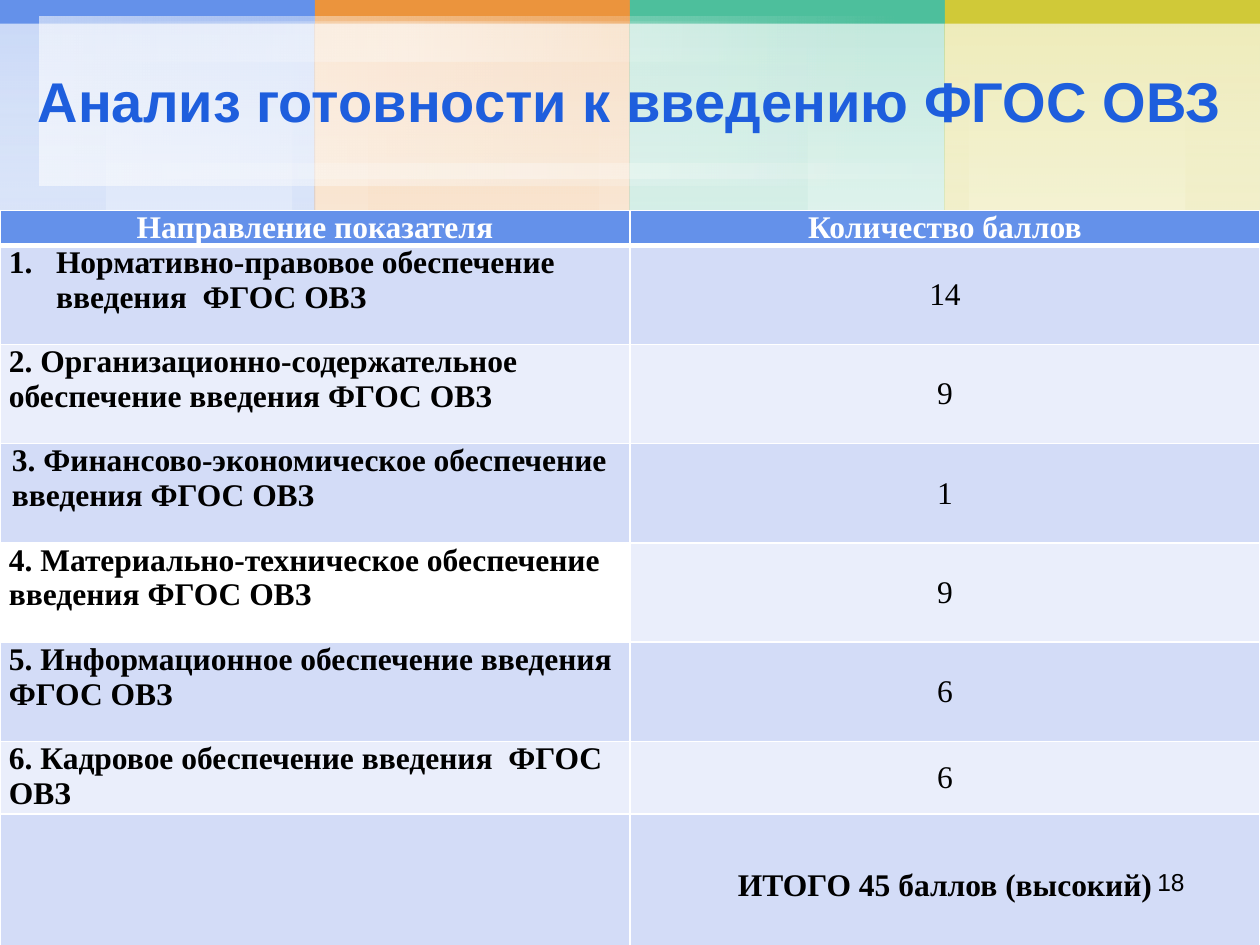
from lxml.etree import SubElement as Sub
from pptx import Presentation
from pptx.dml.color import RGBColor as RGB
from pptx.enum.shapes import MSO_SHAPE as Shape
from pptx.enum.text import MSO_ANCHOR as Anchor, PP_ALIGN as Align
from pptx.oxml.ns import qn
from pptx.util import Cm, Pt

BLUE = RGB(0x64, 0x91, 0xEA)
ORANGE = RGB(0xEB, 0x94, 0x3D)
GREEN = RGB(0x4D, 0xBF, 0x9C)
YELLOW = RGB(0xD0, 0xC9, 0x38)
WHITE = RGB(0xFF, 0xFF, 0xFF)
BLACK = RGB(0, 0, 0)
TITLE = RGB(0x1E, 0x5E, 0xDD)
DARK = RGB(0xD3, 0xDC, 0xF7)
LIGHT = RGB(0xEA, 0xEE, 0xFB)
SERIF = "Times New Roman"

deck = Presentation()
deck.slide_width, deck.slide_height = Cm(25.4), Cm(19.05)
slide = deck.slides.add_slide(deck.slide_layouts[5])
shapes = slide.shapes


def add_box(left, top, width, height, hue, angle=None, stops=()):
    box = shapes.add_shape(Shape.RECTANGLE, Cm(left), Cm(top), Cm(width), Cm(height))
    box.shadow.inherit = False
    box.line.fill.background()
    if angle is None:
        box.fill.solid()
        box.fill.fore_color.rgb = hue
        return
    box.fill.gradient()
    box.fill.gradient_angle = angle
    group = box._element.spPr.find(".//" + qn("a:gsLst"))
    for old in list(group):
        group.remove(old)
    for pos, alpha in stops:
        stop = Sub(group, qn("a:gs"), pos=str(pos * 1000))
        tint = Sub(stop, qn("a:srgbClr"), val=str(hue if alpha else WHITE))
        Sub(tint, qn("a:alpha"), val=str(alpha * 1000))


def style(para, size, font, hue, bold, align):
    para.alignment = align
    for run in para.runs:
        run.font.size, run.font.name = Pt(size), font
        run.font.color.rgb, run.font.bold = hue, bold


FADE = [(0, 20), (100, 0)]
GLOW = [(0, 0), (50, 20), (100, 0)]
SHINE = [(0, 35), (100, 0)]
GLEAM = [(0, 0), (50, 35), (100, 0)]
WIDE = 6.35

bands = [
    (BLUE, 14.28, 14.28, [(5.89, 0.46), (0, 2.13)]),
    (ORANGE, 19.05, 19.05, [(1.07, 4.65)]),
    (GREEN, 14.28, 14.28, [(0, 3.58)]),
    (YELLOW, 18.97, 16.18, [(0, 0.48), (4.85, 1.5)]),
]
for num, (hue, tall, low, glows) in enumerate(bands):
    left = num * WIDE
    add_box(left, 0, WIDE, tall, hue, 270, FADE)
    for shift, width in glows:
        add_box(left + shift, 0, width, low, hue, 270, GLOW)
    add_box(left, 0, WIDE, tall, hue, 270, FADE)
for num, band in enumerate(bands):
    add_box(num * WIDE, 0, WIDE, 0.48, band[0])

for left, top, width, height, stops in [
    (0.8, 3.3, 19.6, 0.3, GLEAM),
    (0.8, 0.34, 17.5, 3.41, SHINE),
    (0.8, 0.44, 14.9, 0.81, GLEAM),
    (0.8, 0.34, 17.5, 3.41, SHINE),
]:
    add_box(left, top, width, height, WHITE, 0, stops)

title = shapes.title
shapes._spTree.append(title._element)
title.left, title.top, title.width, title.height = Cm(0), Cm(0.71), Cm(25.4), Cm(2.62)
title.text_frame.text = "Анализ готовности к введению ФГОС ОВЗ"
title.text_frame.vertical_anchor = Anchor.MIDDLE
style(title.text_frame.paragraphs[0], 32, "Arial", TITLE, True, Align.CENTER)

rows = [
    ("Направление показателя", "Количество баллов"),
    ("Нормативно-правовое обеспечение введения  ФГОС ОВЗ", "14"),
    ("2. Организационно-содержательное обеспечение введения ФГОС ОВЗ", "9"),
    ("3. Финансово-экономическое обеспечение введения ФГОС ОВЗ", "1"),
    ("4. Материально-техническое обеспечение введения ФГОС ОВЗ", "9"),
    ("5. Информационное обеспечение введения  ФГОС ОВЗ", "6"),
    ("6. Кадровое обеспечение введения  ФГОС ОВЗ", "6"),
    ("", "ИТОГО 45 баллов (высокий)"),
]
talls = [0.67] + [2] * 5 + [1.47, 2.9]
last = len(rows) - 1
frame = shapes.add_table(len(rows), 2, Cm(0), Cm(4.24), Cm(25.4), Cm(sum(talls)))
table = frame.table
for row, texts in enumerate(rows):
    table.rows[row].height = Cm(talls[row])
    for col, text in enumerate(texts):
        cell = table.cell(row, col)
        cell.margin_left = cell.margin_right = Cm(0.18)
        cell.margin_top = cell.margin_bottom = Cm(0)
        head = row == 0
        mid = head or col == 1
        cell.vertical_anchor = Anchor.MIDDLE if mid else Anchor.TOP
        for side in "LRTB":
            thick = 3 if (head and side == "B") or (row == 1 and side == "T") else 1
            edge = Sub(cell._tc.tcPr, qn("a:ln" + side), w=str(Pt(thick)))
            Sub(Sub(edge, qn("a:solidFill")), qn("a:srgbClr"), val=str(WHITE))
        cell.fill.solid()
        if head:
            fill = BLUE
        elif (row, col) == (4, 0):
            fill = WHITE
        else:
            fill = DARK if row % 2 else LIGHT
        cell.fill.fore_color.rgb = fill
        cell.text_frame.text = text
        style(cell.text_frame.paragraphs[0], 18, SERIF, WHITE if head else BLACK,
              col == 0 or row in (0, last), Align.CENTER if mid else Align.LEFT)

first = table.cell(1, 0).text_frame.paragraphs[0]._p.get_or_add_pPr()
first.set("marL", str(Cm(0.95)))
first.set("indent", str(-Cm(0.95)))
Sub(first, qn("a:buFont"), typeface="+mj-lt")
Sub(first, qn("a:buAutoNum"), type="arabicPeriod")
third = table.cell(3, 0).text_frame.paragraphs[0]._p.get_or_add_pPr()
third.set("marL", str(Cm(0.06)))

page = shapes.add_textbox(Cm(18.2), Cm(17.35), Cm(5.93), Cm(1.32))
page.text_frame.word_wrap = True
page.text_frame.text = "18"
style(page.text_frame.paragraphs[0], 14, "Arial", BLACK, False, Align.RIGHT)

deck.save("out.pptx")
